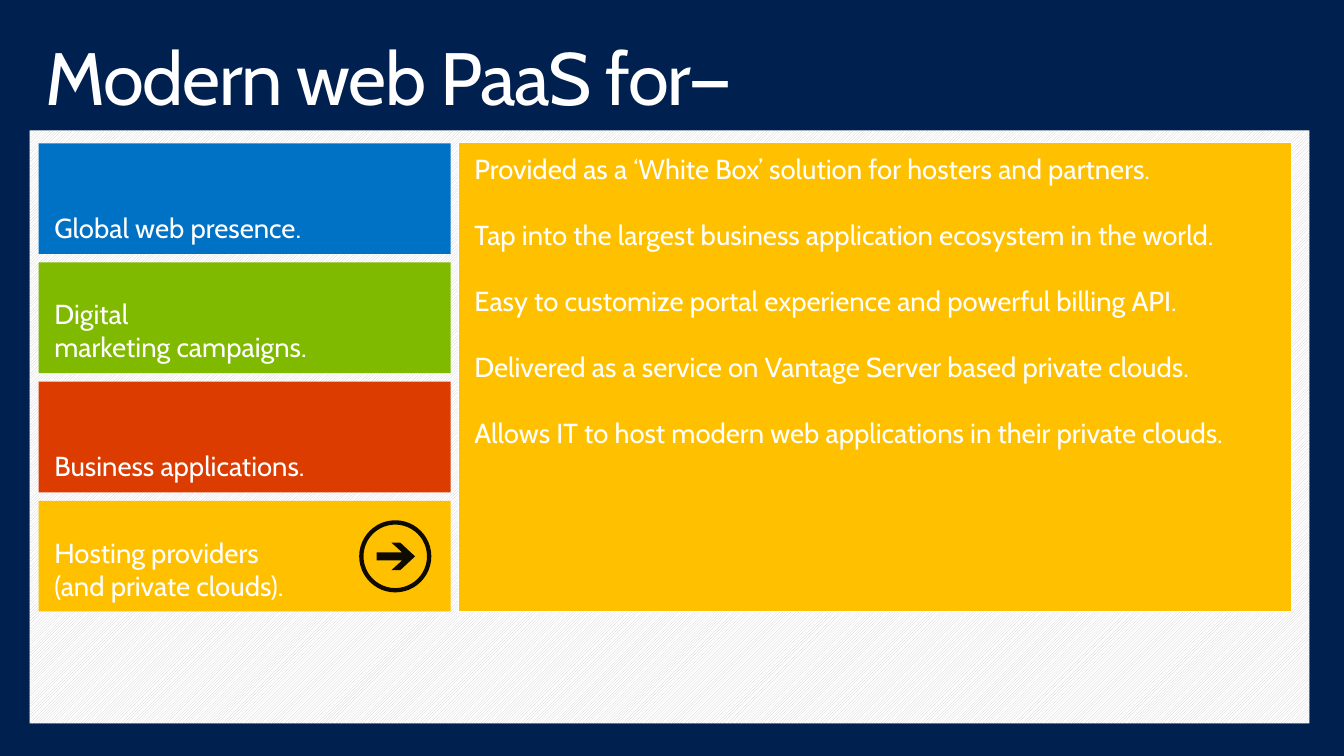
"""Build the slide on modern web PaaS audiences, with tiles on the left and details on the right."""
from lxml import etree
from pptx import Presentation
from pptx import util as u
from pptx.dml import color
from pptx.enum import dml, shapes, text

theme = {
    "font": "Cabin", "head": 54, "body": 20, "gap": 24,
    "navy": "002050", "white": "FFFFFF", "black": "000000", "hatch": "CDCDCD",
    "blue": "0072C6", "green": "7FBA00", "red": "DC3C00", "gold": "FFC000",
}
wide, high = 13.6, 7.65
left, top = 0.39, 1.45
tile_w, tile_h, step = 4.17, 1.12, 1.206


def paint(item, name):
    """Give a shape a plain fill with no line or shadow."""
    item.shadow.inherit = False
    item.fill.solid()
    item.fill.fore_color.rgb = color.RGBColor.from_string(theme[name])
    item.line.fill.background()


def write(item, paras, size, anchor, gap=0):
    """Set the paragraphs of a shape run by run."""
    frame = item.text_frame
    frame.word_wrap = True
    frame.vertical_anchor = anchor
    frame.margin_left = frame.margin_right = u.Inches(0.16)
    frame.margin_top = frame.margin_bottom = u.Inches(0.1)
    for n, words in enumerate(paras):
        para = frame.add_paragraph() if n else frame.paragraphs[0]
        para.alignment = text.PP_ALIGN.LEFT
        para.space_after = u.Pt(gap)
        for k, line in enumerate(words.split("\n")):
            if k:
                para.add_line_break()
            run = para.add_run()
            run.text = line
            run.font.name = theme["font"]
            run.font.size = u.Pt(size)
            run.font.color.rgb = color.RGBColor.from_string(theme["white"])


deck = Presentation()
deck.slide_width, deck.slide_height = u.Inches(wide), u.Inches(high)
slide = deck.slides.add_slide(deck.slide_layouts[6])
slide.background.fill.solid()
slide.background.fill.fore_color.rgb = color.RGBColor.from_string(theme["navy"])
add = slide.shapes.add_shape
rect = shapes.MSO_SHAPE.RECTANGLE

panel = add(rect, *map(u.Inches, (0.3, 1.32, 12.95, 6)))
paint(panel, "white")
panel.fill.patterned()
panel.fill.pattern = dml.MSO_PATTERN.LIGHT_UPWARD_DIAGONAL
panel.fill.fore_color.rgb = color.RGBColor.from_string(theme["hatch"])
panel.fill.back_color.rgb = color.RGBColor.from_string(theme["white"])

title = slide.shapes.add_textbox(*map(u.Inches, (0.3, 0.32, 13, 1)))
write(title, ["Modern web PaaS for—"], theme["head"], text.MSO_ANCHOR.TOP)
para = title.text_frame.paragraphs[0]
para.line_spacing = 0.9
para.runs[0].font._element.set("spc", "-100")

tiles = [
    ("blue", ["Global web presence."]),
    ("green", ["Digital \nmarketing campaigns."]),
    ("red", ["Business applications."]),
    ("gold", ["Hosting providers", "(and private clouds)."]),
]
for row, (hue, words) in enumerate(tiles):
    tile = add(rect, *map(u.Inches, (left, top + row * step, tile_w, tile_h)))
    paint(tile, hue)
    write(tile, words, theme["body"], text.MSO_ANCHOR.BOTTOM)

mid_x, mid_y, size = 4.0, 5.63, 0.73
ring = add(shapes.MSO_SHAPE.DONUT,
           *map(u.Inches, (mid_x - size / 2, mid_y - size / 2, size, size)))
ring.adjustments[0] = 0.06
half = [(-0.19, -0.04), (0.07, -0.04), (-0.04, -0.14), (0.05, -0.14), (0.2, 0)]
edge = half + [(x, -y) for x, y in half[-2::-1]]
spots = [(u.Inches(mid_x + x), u.Inches(mid_y + y)) for x, y in edge]
pen = slide.shapes.build_freeform(*spots[0])
pen.add_line_segments(spots[1:], close=True)
arrow = pen.convert_to_shape()
for part in (ring, arrow):
    paint(part, "black")
    tint = part.fill._xPr.find(".//{*}srgbClr")
    etree.SubElement(tint, tint.tag.replace("srgbClr", "alpha"), val="94000")

detail = add(rect, *map(u.Inches, (4.64, 1.44, 8.43, 4.75)))
paint(detail, "gold")
detail.line.color.rgb = color.RGBColor.from_string(theme["white"])
detail.line.width = u.Pt(0.75)
write(detail, [
    "Provided as a ‘White Box’ solution for hosters and partners.",
    "Tap into the largest business application ecosystem in the world.",
    "Easy to customize portal experience and powerful billing API.",
    "Delivered as a service on Vantage Server based private clouds.",
    "Allows IT to host modern web applications in their private clouds.",
], theme["body"], text.MSO_ANCHOR.TOP, theme["gap"])

deck.save("out.pptx")
